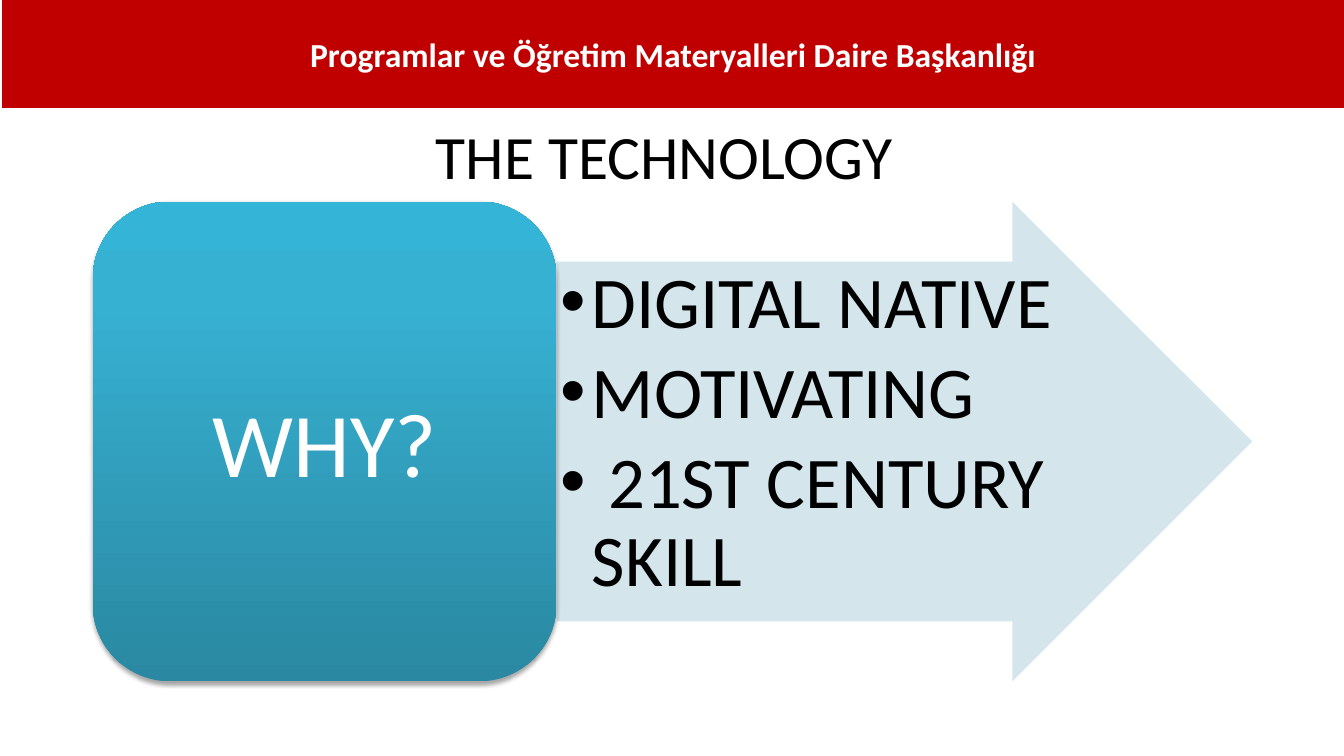
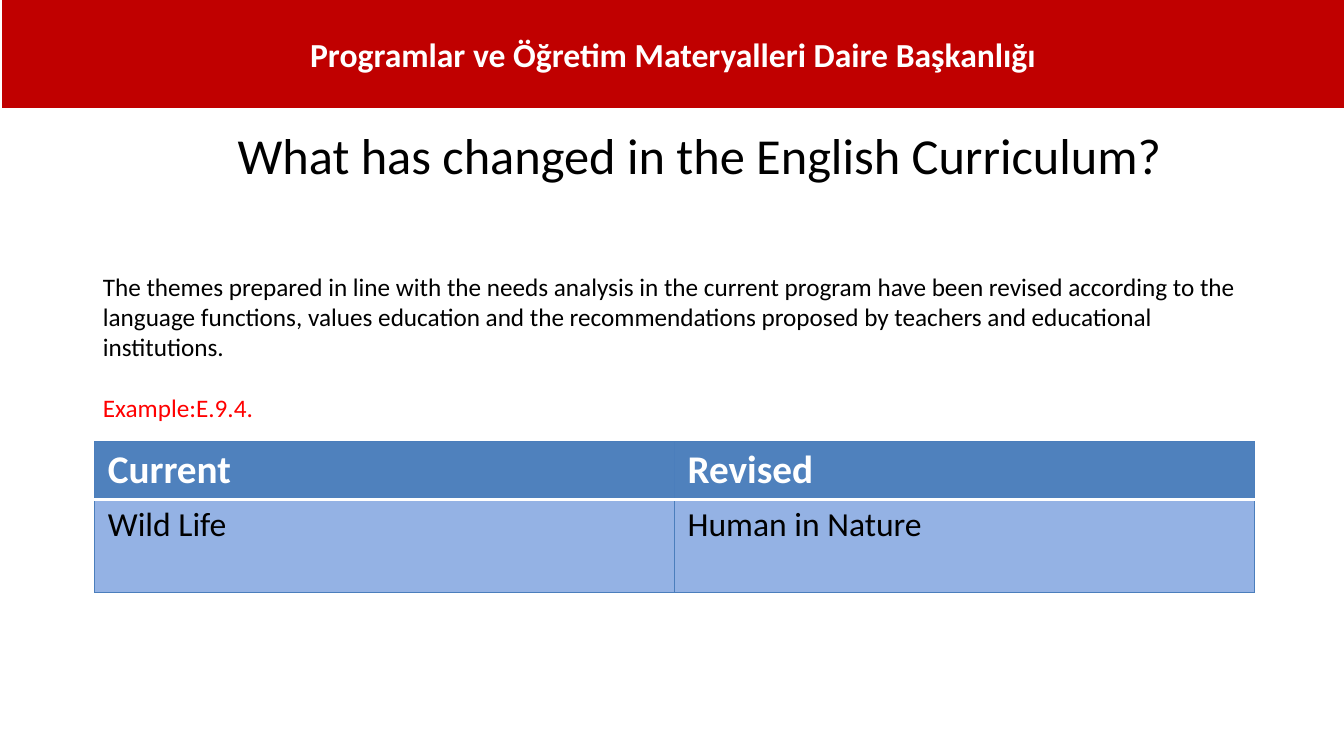
from lxml.etree import SubElement
from copy import deepcopy
from pptx import Presentation
from pptx.dml.color import RGBColor
from pptx.enum.shapes import MSO_SHAPE as Preset
from pptx.enum.text import MSO_ANCHOR as Anchor, MSO_AUTO_SIZE as AutoSize, PP_ALIGN as Align
from pptx.oxml.ns import qn
from pptx.util import Inches, Pt

FONT = "Calibri"
BLACK = RGBColor(0x00, 0x00, 0x00)
WHITE = RGBColor(0xFF, 0xFF, 0xFF)
RED = RGBColor(0xFF, 0x00, 0x00)
BAND_RED = RGBColor(0xC0, 0x00, 0x00)
ARROW_BLUE = RGBColor(0xD0, 0xE3, 0xEA)
HEADER_BLUE = RGBColor(0x4F, 0x81, 0xBD)
ROW_BLUE = RGBColor(0x94, 0xB2, 0xE4)
BORDER_BLUE = RGBColor(0x4B, 0x7E, 0xBC)
TEAL_STOPS = [
    (0, RGBColor(0x2A, 0x88, 0xA2)),
    (0.8, RGBColor(0x37, 0xB1, 0xD2)),
    (1, RGBColor(0x34, 0xB4, 0xD6)),
]


def add_run(paragraph, text, size, color, bold=False):
    run = paragraph.add_run()
    run.text = text
    run.font.name = FONT
    run.font.size = Pt(size)
    run.font.bold = bold
    run.font.color.rgb = color


def place(shape, left, top, width, height):
    shape.left, shape.top = Inches(left), Inches(top)
    shape.width, shape.height = Inches(width), Inches(height)


def add_preset(slide, preset, left, top, width, height):
    shape = slide.shapes.add_shape(
        preset, Inches(left), Inches(top), Inches(width), Inches(height))
    shape.shadow.inherit = False
    shape.line.fill.background()
    return shape


def add_centred_text(shape, text, size, color, bold=False):
    frame = shape.text_frame
    frame.word_wrap = True
    frame.auto_size = AutoSize.NONE
    frame.vertical_anchor = Anchor.MIDDLE
    paragraph = frame.paragraphs[0]
    paragraph.alignment = Align.CENTER
    add_run(paragraph, text, size, color, bold)


def set_bullet(paragraph, indent=0, character=None):
    properties = paragraph._p.get_or_add_pPr()
    properties.set("marL", str(Inches(indent)))
    properties.set("indent", str(-Inches(indent)))
    if character:
        SubElement(properties, qn("a:buFont")).set("typeface", "Arial")
        SubElement(properties, qn("a:buChar")).set("char", character)
    else:
        SubElement(properties, qn("a:buNone"))


def add_titled_slide(presentation, title, size, shift):
    slide = presentation.slides.add_slide(presentation.slide_layouts[1])
    place(slide.shapes.title, 0.92 + shift, 0.81, 11.5, 1.45)
    add_centred_text(slide.shapes.title, title, size, BLACK)
    band = add_preset(slide, Preset.RECTANGLE, 0.02, 0, 13.31, 1.07)
    band.fill.solid()
    band.fill.fore_color.rgb = BAND_RED
    add_centred_text(
        band, "Programlar ve Öğretim Materyalleri Daire Başkanlığı", 24, WHITE, True)
    return slide


def fill_body(slide, left, top, width, height):
    body = slide.placeholders[1]
    place(body, left, top, width, height)
    frame = body.text_frame
    frame.word_wrap = True
    frame.auto_size = AutoSize.NONE
    frame.vertical_anchor = Anchor.TOP
    slide.shapes.element.append(body.element)
    return frame


def add_arrow(slide, left, top, width, height):
    arrow = add_preset(slide, Preset.RIGHT_ARROW, left, top, width, height)
    arrow.adjustments[0] = 0.75
    arrow.adjustments[1] = 0.5
    arrow.fill.solid()
    arrow.fill.fore_color.rgb = ARROW_BLUE
    color = arrow.element.spPr.find(qn("a:solidFill"))[0]
    SubElement(color, qn("a:alpha")).set("val", "90000")


def add_question_box(slide, text, left, top, width, height):
    box = add_preset(slide, Preset.ROUNDED_RECTANGLE, left, top, width, height)
    box.fill.gradient()
    box.fill.gradient_angle = 90
    stop_list = box.element.spPr.find(qn("a:gradFill")).find(qn("a:gsLst"))
    stop_list.append(deepcopy(stop_list[-1]))
    for stop, (position, color) in zip(box.fill.gradient_stops, TEAL_STOPS):
        stop.position = position
        stop.color.rgb = color
    effects = box.element.spPr.find(qn("a:effectLst"))
    shadow = SubElement(effects, qn("a:outerShdw"), blurRad=str(Pt(3.1)),
                        dist=str(Pt(1.8)), dir="5400000", rotWithShape="0")
    color = SubElement(shadow, qn("a:srgbClr"), val=str(BLACK))
    SubElement(color, qn("a:alpha"), val="35000")
    add_centred_text(box, text, 65, WHITE)


def add_reasons(slide, question, reasons, left, top, width, height):
    box_width = width * 0.4
    arrow_left = left + box_width
    add_arrow(slide, arrow_left, top, width - box_width, height)
    add_question_box(slide, question, left, top, box_width, height)
    frame = fill_body(slide, arrow_left, top + height / 8, 5.12, height * 0.75)
    frame.margin_left = frame.margin_right = Inches(0.04)
    frame.margin_top = frame.margin_bottom = Inches(0.04)
    for index, reason in enumerate(reasons):
        paragraph = frame.add_paragraph() if index else frame.paragraphs[0]
        set_bullet(paragraph, 0.31, "•")
        paragraph.line_spacing = 0.9
        paragraph.space_before = Pt(0)
        paragraph.space_after = Pt(8)
        add_run(paragraph, reason, 52, BLACK)


def add_explanation(slide, parts, left, top, width, height):
    frame = fill_body(slide, left, top, width, height)
    for index, (text, color) in enumerate(parts):
        paragraph = frame.add_paragraph() if index else frame.paragraphs[0]
        set_bullet(paragraph)
        paragraph.space_before = Pt(22 if index else 0)
        add_run(paragraph, text, 18, color)


def set_borders(cell, **borders):
    properties = cell._tc.get_or_add_tcPr()
    for side in "LRTB":
        color, width = borders.get(side, (BORDER_BLUE, 0.75))
        line = SubElement(properties, qn(f"a:ln{side}"), w=str(Pt(width)))
        fill = SubElement(line, qn("a:solidFill"))
        SubElement(fill, qn("a:srgbClr"), val=str(color))


def add_theme_table(slide, rows, left, top, width, heights):
    table = slide.shapes.add_table(
        len(rows), len(rows[0]), Inches(left), Inches(top),
        Inches(width), Inches(sum(heights))).table
    divider = (WHITE, 2)
    styles = [
        (HEADER_BLUE, 28, WHITE, True, {"B": divider}),
        (ROW_BLUE, 24, BLACK, False, {"T": divider}),
    ]
    for row_index, (texts, style) in enumerate(zip(rows, styles)):
        fill, size, color, bold, borders = style
        table.rows[row_index].height = Inches(heights[row_index])
        for column_index, text in enumerate(texts):
            cell = table.cell(row_index, column_index)
            cell.margin_left = cell.margin_right = Inches(0.13)
            cell.margin_top = cell.margin_bottom = Inches(0.05)
            set_borders(cell, **borders)
            cell.fill.solid()
            cell.fill.fore_color.rgb = fill
            add_run(cell.text_frame.paragraphs[0], text, size, color, bold)


def build_technology_slide(presentation):
    slide = add_titled_slide(presentation, "THE TECHNOLOGY", 44, -0.08)
    reasons = ["DIGITAL NATIVE", "MOTIVATING", " 21ST CENTURY SKILL"]
    add_reasons(slide, "WHY?", reasons, 0.92, 2, 11.5, 4.76)


def build_curriculum_slide(presentation):
    slide = add_titled_slide(
        presentation, "What has changed in the English Curriculum?", 36, 0.27)
    add_theme_table(
        slide, [("Current", "Revised"), ("Wild Life", "Human in Nature")],
        0.94, 4.38, 11.5, (0.57, 0.92))
    add_explanation(slide, [
        ("The themes prepared in line with the needs analysis in the current program "
         "have been revised according to the language functions, values education and "
         "the recommendations proposed by teachers and educational institutions.", BLACK),
        ("Example:E.9.4.", RED),
    ], 0.92, 2.64, 11.5, 1.62)


def main():
    presentation = Presentation()
    presentation.slide_width = Inches(13.33)
    presentation.slide_height = Inches(7.5)
    build_technology_slide(presentation)
    build_curriculum_slide(presentation)
    presentation.save("out.pptx")


if __name__ == "__main__":
    main()
